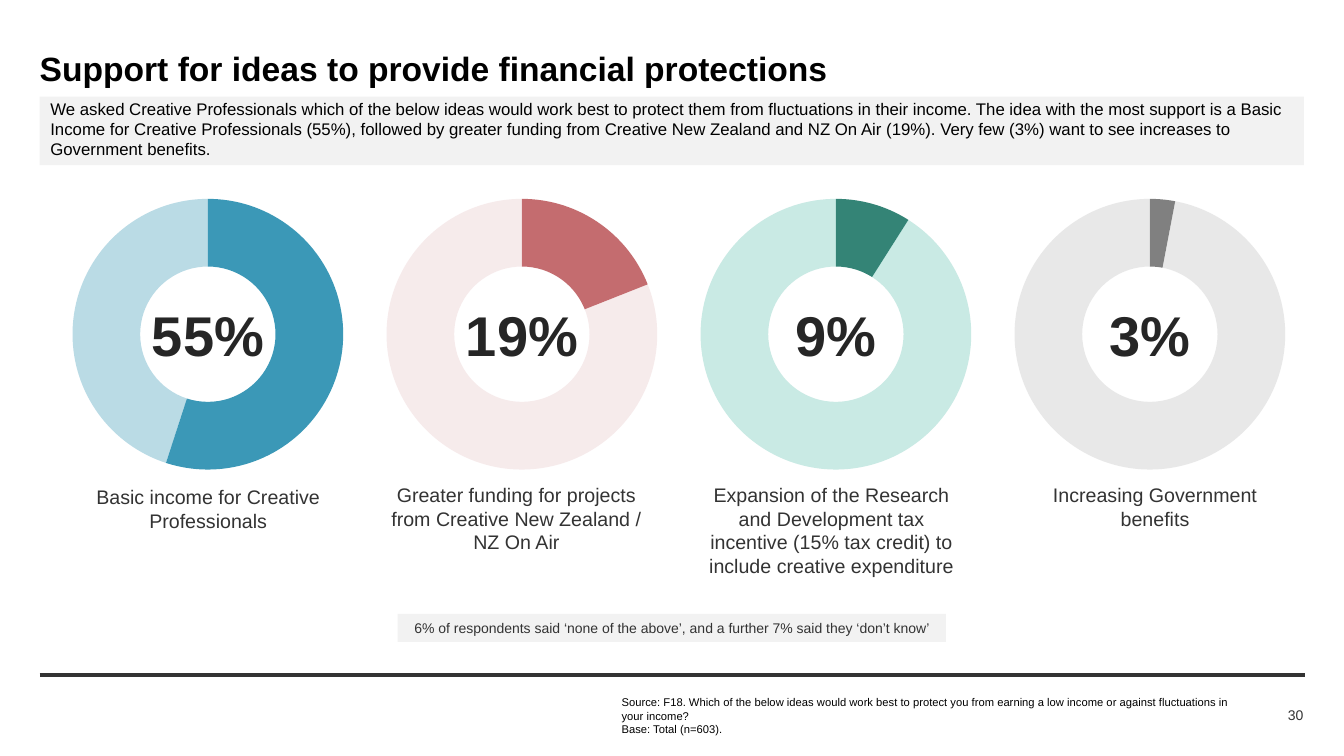
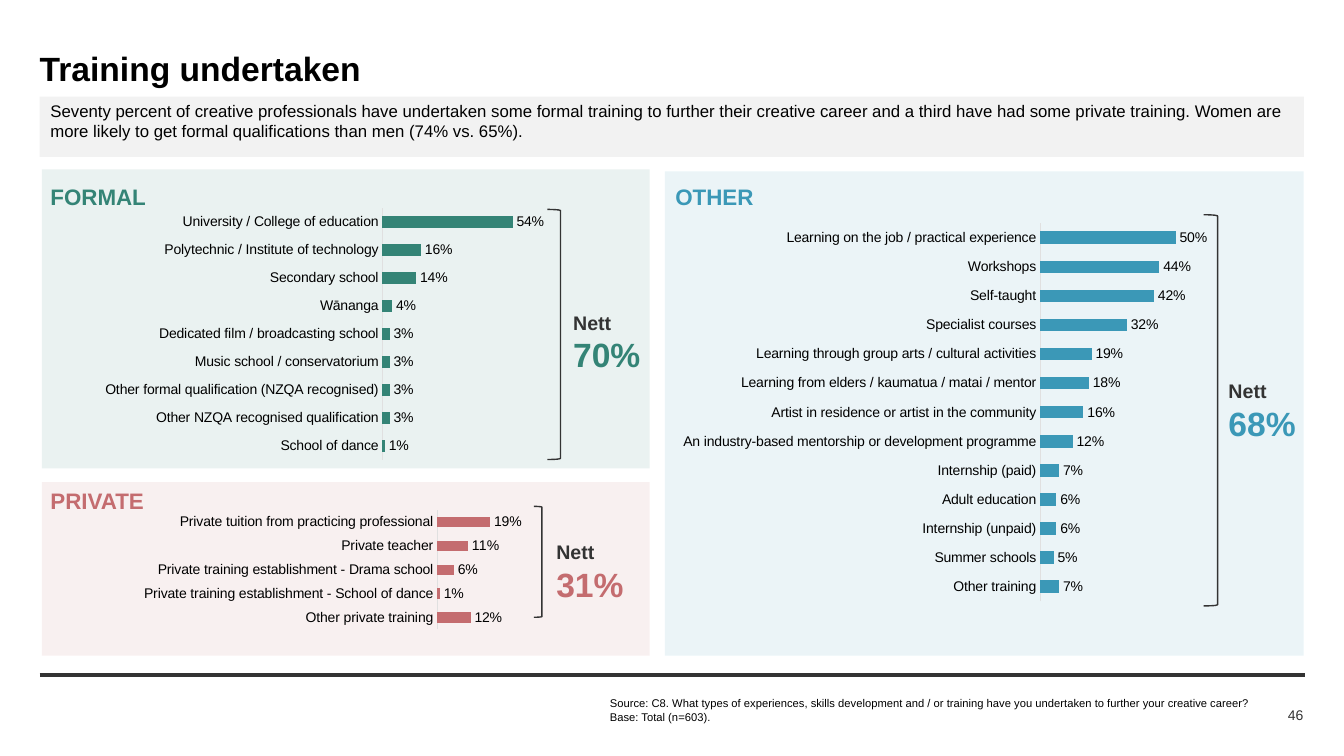
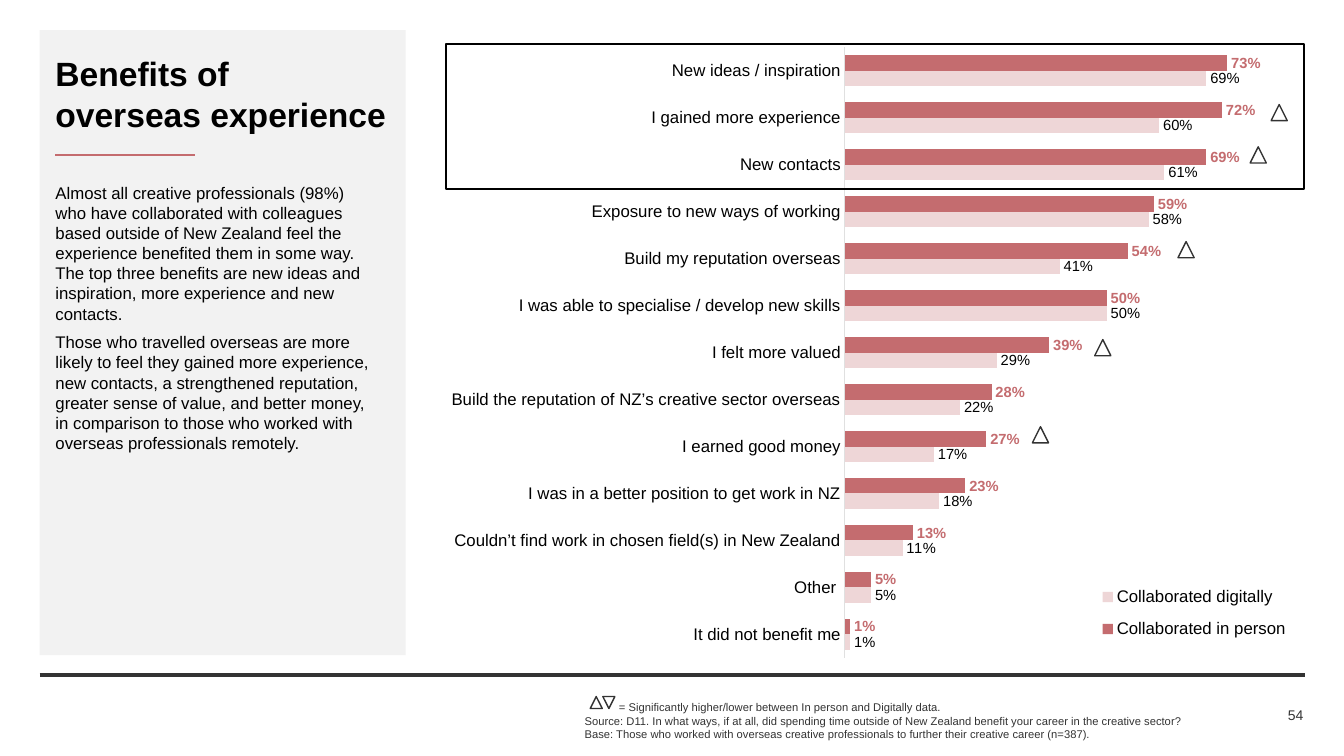
from dataclasses import dataclass

from lxml import etree
from pptx import Presentation
from pptx.chart.data import CategoryChartData
from pptx.dml.color import RGBColor
from pptx.enum.chart import XL_CHART_TYPE, XL_LABEL_POSITION, XL_LEGEND_POSITION, XL_TICK_MARK
from pptx.enum.shapes import MSO_CONNECTOR, MSO_SHAPE
from pptx.enum.text import MSO_ANCHOR, PP_ALIGN
from pptx.oxml.ns import qn
from pptx.util import Pt

LEFT, CENTER, RIGHT = PP_ALIGN.LEFT, PP_ALIGN.CENTER, PP_ALIGN.RIGHT
TOP, MIDDLE = MSO_ANCHOR.TOP, MSO_ANCHOR.MIDDLE
RECTANGLE, TRIANGLE = MSO_SHAPE.RECTANGLE, MSO_SHAPE.ISOSCELES_TRIANGLE
BRACKET = MSO_SHAPE.LEFT_BRACKET
BAR, DOUGHNUT = XL_CHART_TYPE.BAR_CLUSTERED, XL_CHART_TYPE.DOUGHNUT
OUTSIDE_END, LEGEND_RIGHT = XL_LABEL_POSITION.OUTSIDE_END, XL_LEGEND_POSITION.RIGHT
NO_TICK, STRAIGHT = XL_TICK_MARK.NONE, MSO_CONNECTOR.STRAIGHT


@dataclass(frozen=True)
class Theme:
    font: str = "Arial"
    black: str = "000000"
    dark: str = "333333"
    figure: str = "262626"
    white: str = "FFFFFF"
    band: str = "F2F2F2"
    axis: str = "E0E0E0"
    blue: str = "3B98B7"
    red: str = "C46C6F"
    pale_red: str = "E8C6C7"
    light_red: str = "EED6D7"
    green: str = "348476"
    mint: str = "65C3B3"
    gray: str = "808080"
    pale_gray: str = "BFBFBF"
    label_gray: str = "666666"
    title: float = 24
    heading: float = 16
    caption: float = 14
    body: float = 12
    label: float = 10
    pair_label: float = 10.5
    source: float = 8
    big: float = 40


THEME = Theme()

PROTECTIONS = {
    "title": "Support for ideas to provide financial protections",
    "summary": "We asked Creative Professionals which of the below ideas would work best to protect them from fluctuations in their income. The idea with the most support is a Basic Income for Creative Professionals (55%), followed by greater funding from Creative New Zealand and NZ On Air (19%). Very few (3%) want to see increases to Government benefits.",
    "source": [
        "Source: F18. Which of the below ideas would work best to protect you from earning a low income or against fluctuations in your income?",
        "Base: Total (n=603).",
    ],
    "note": "6% of respondents said ‘none of the above’, and a further 7% said they ‘don’t know’",
    "page": "30",
}
IDEAS = [
    (55, "Basic income for Creative Professionals", THEME.blue, THEME.blue, (55.5, 346.5)),
    (19, "Greater funding for projects from Creative New Zealand / NZ On Air",
     THEME.red, THEME.pale_red, (275.6, 345)),
    (9, "Expansion of the Research and Development tax incentive (15% tax credit) to include creative expenditure",
     THEME.green, THEME.mint, (500.7, 345)),
    (3, "Increasing Government benefits", THEME.gray, THEME.pale_gray, (731.8, 345)),
]

TRAINING = {
    "title": "Training undertaken",
    "summary": "Seventy percent of creative professionals have undertaken some formal training to further their creative career and a third have had some private training. Women are more likely to get formal qualifications than men (74% vs. 65%).",
    "source": [
        "Source: C8. What types of experiences, skills development and / or training have you undertaken to further your creative career?",
        "Base: Total (n=603).",
    ],
    "page": "46",
}
TRAINING_PANELS = [
    {
        "name": "FORMAL", "nett": "70%", "color": THEME.green,
        "panel": (30, 121, 434, 213.6), "heading": (36, 131), "chart": (-22, 144.7, 566.6, 191.5),
        "plot": (0.521, 0.021, 0.304, 0.938), "bracket": (391, 149.6, 9.4, 178.6), "total": (409.4, 221.8),
        "rows": [
            ("University / College of education", 54),
            ("Polytechnic / Institute of technology", 16),
            ("Secondary school", 14),
            ("Wānanga", 4),
            ("Dedicated film / broadcasting school", 3),
            ("Music school / conservatorium", 3),
            ("Other formal qualification (NZQA recognised)", 3),
            ("Other NZQA recognised qualification", 3),
            ("School of dance", 1),
        ],
    },
    {
        "name": "PRIVATE", "nett": "31%", "color": THEME.red,
        "panel": (30, 344.4, 434, 124), "heading": (36, 347.8), "chart": (6.9, 361.6, 566.6, 90.7),
        "plot": (0.539, 0.032, 0.352, 0.938), "bracket": (381.3, 361.7, 5.8, 79.2), "total": (397.4, 386),
        "rows": [
            ("Private tuition from practicing professional", 19),
            ("Private teacher", 11),
            ("Private training establishment - Drama school", 6),
            ("Private training establishment - School of dance", 1),
            ("Other private training", 12),
        ],
    },
    {
        "name": "OTHER", "nett": "68%", "color": THEME.blue,
        "panel": (475, 122.4, 456.2, 346), "heading": (482.4, 131), "chart": (460.5, 153.4, 561.6, 288),
        "plot": (0.503, 0.021, 0.345, 0.938), "bracket": (859.7, 153.4, 10, 279.4), "total": (877.5, 270.7),
        "rows": [
            ("Learning on the job / practical experience", 50),
            ("Workshops", 44),
            ("Self-taught", 42),
            ("Specialist courses", 32),
            ("Learning through group arts / cultural activities", 19),
            ("Learning from elders / kaumatua / matai / mentor", 18),
            ("Artist in residence or artist in the community", 16),
            ("An industry-based mentorship or development programme", 12),
            ("Internship (paid)", 7),
            ("Adult education", 6),
            ("Internship (unpaid)", 6),
            ("Summer schools", 5),
            ("Other training", 7),
        ],
    },
]

BENEFITS = {
    "title": "Benefits of\voverseas experience",
    "body": [
        "Almost all creative professionals (98%) who have collaborated with colleagues based outside of New Zealand feel the experience benefited them in some way. The top three benefits are new ideas and inspiration, more experience and new contacts.",
        "Those who travelled overseas are more likely to feel they gained more experience, new contacts, a strengthened reputation, greater sense of value, and better money, in comparison to those who worked with overseas professionals remotely.",
    ],
    "source": [
        "= Significantly higher/lower between In person and Digitally data.",
        "Source: D11. In what ways, if at all, did spending time outside of New Zealand benefit your career in the creative sector?",
        "Base: Those who worked with overseas creative professionals to further their creative career (n=387).",
    ],
    "page": "54",
}
BENEFIT_ROWS = [
    ("New ideas / inspiration", 73, 69),
    ("I gained more experience", 72, 60),
    ("New contacts", 69, 61),
    ("Exposure to new ways of working", 59, 58),
    ("Build my reputation overseas", 54, 41),
    ("I was able to specialise / develop new skills", 50, 50),
    ("I felt more valued", 39, 29),
    ("Build the reputation of NZ’s creative sector overseas", 28, 22),
    ("I earned good money", 27, 17),
    ("I was in a better position to get work in NZ", 23, 18),
    ("Couldn’t find work in chosen field(s) in New Zealand", 13, 11),
    ("Other ", 5, 5),
    ("It did not benefit me", 1, 1),
]
HIGHER_MARKS = [(908, 74.7), (893, 104.9), (841.5, 172.6), (782, 242.6), (737.5, 304.8)]


def rgb(color):
    return RGBColor.from_string(color)


def points(box):
    return [Pt(value) for value in box]


def style_font(font, size, color, bold=False):
    font.name = THEME.font
    font.size = Pt(size)
    font.bold = bold
    font.color.rgb = rgb(color)


def fill_solid(fill, color, opacity=100):
    fill.solid()
    fill.fore_color.rgb = rgb(color)
    if opacity < 100:
        for node in fill._xPr.iter(qn("a:srgbClr")):
            etree.SubElement(node, qn("a:alpha"), val=str(opacity * 1000))


def write(frame, lines, align=LEFT, anchor=TOP, space=0):
    frame.word_wrap = True
    frame.vertical_anchor = anchor
    for index, (text, size, color, bold) in enumerate(lines):
        paragraph = frame.paragraphs[0] if index == 0 else frame.add_paragraph()
        paragraph.alignment = align
        paragraph.space_before = Pt(space if index else 0)
        for position, part in enumerate(text.split("\v")):
            if position:
                paragraph.add_line_break()
            run = paragraph.add_run()
            run.text = part
            style_font(run.font, size, color, bold)


def add_text(slide, box, lines, **options):
    frame = slide.shapes.add_textbox(*points(box)).text_frame
    frame.margin_left = frame.margin_right = frame.margin_top = frame.margin_bottom = 0
    write(frame, lines, **options)
    return frame


def add_shape(slide, kind, box, fill=None, opacity=100, line=None, width=1, rotation=0):
    shape = slide.shapes.add_shape(kind, *points(box))
    shape.shadow.inherit = False
    shape.rotation = rotation
    if fill:
        fill_solid(shape.fill, fill, opacity)
    else:
        shape.fill.background()
    if line:
        shape.line.color.rgb = rgb(line)
        shape.line.width = Pt(width)
    else:
        shape.line.fill.background()
    return shape


def add_rule(slide, left, right, y, color, width):
    rule = slide.shapes.add_connector(STRAIGHT, *points((left, y, right, y)))
    rule.line.color.rgb = rgb(color)
    rule.line.width = Pt(width)
    etree.SubElement(rule._element.spPr, qn("a:effectLst"))


def add_layout(parent, index, box):
    for node in parent.findall(qn("c:layout")):
        parent.remove(node)
    layout = etree.Element(qn("c:layout"))
    manual = etree.SubElement(layout, qn("c:manualLayout"))
    if parent.tag == qn("c:plotArea"):
        etree.SubElement(manual, qn("c:layoutTarget"), val="inner")
    for name in ("xMode", "yMode"):
        etree.SubElement(manual, qn("c:" + name), val="edge")
    for name, value in zip("xywh", box):
        etree.SubElement(manual, qn("c:" + name), val=str(value))
    parent.insert(index, layout)


def add_chart(slide, kind, box, plot_box, categories, series):
    data = CategoryChartData(number_format="0%")
    data.categories = categories
    for name, values in series:
        data.add_series(name, [value / 100 for value in values])
    chart = slide.shapes.add_chart(kind, *points(box), data).chart
    chart.has_title = False
    chart.has_legend = False
    style_font(chart.font, THEME.label, THEME.dark)
    properties = etree.Element(qn("c:spPr"))
    etree.SubElement(properties, qn("a:noFill"))
    etree.SubElement(etree.SubElement(properties, qn("a:ln")), qn("a:noFill"))
    chart.element.find(qn("c:chart")).addnext(properties)
    add_layout(next(chart.element.iter(qn("c:plotArea"))), 0, plot_box)
    chart.plots[0].vary_by_categories = kind == DOUGHNUT
    return chart


def add_doughnut(slide, box, value, color, rest_color):
    chart = add_chart(slide, DOUGHNUT, box, (0.2, 0.045, 0.6, 0.908), ["1", "2"],
                      [("Series 1", (value, 100 - value))])
    next(chart.element.iter(qn("c:holeSize"))).set("val", "66")
    ring = chart.plots[0].series[0]
    labels = ring.data_labels
    labels.show_value = True
    style_font(labels.font, THEME.caption, THEME.label_gray)
    label_list = ring._element.find(qn("c:dLbls"))
    for index, (part_color, opacity) in enumerate([(color, 100), (rest_color, 35)]):
        part = ring.points[index].format
        fill_solid(part.fill, part_color, opacity)
        part.line.fill.background()
        hidden = etree.Element(qn("c:dLbl"))
        etree.SubElement(hidden, qn("c:idx"), val=str(index))
        etree.SubElement(hidden, qn("c:delete"), val="1")
        label_list.insert(index, hidden)


def add_bars(slide, box, plot_box, categories, series, styles, gap, maximum, category_size):
    chart = add_chart(slide, BAR, box, plot_box, categories, series)
    plot = chart.plots[0]
    plot.gap_width = gap
    plot.overlap = 0
    axis = chart.category_axis
    axis.reverse_order = True
    axis.major_tick_mark = axis.minor_tick_mark = NO_TICK
    axis.has_major_gridlines = False
    axis.format.line.color.rgb = rgb(THEME.axis)
    axis.format.line.width = Pt(0.75)
    style_font(axis.tick_labels.font, category_size, THEME.black)
    values = chart.value_axis
    values.minimum_scale, values.maximum_scale = 0, maximum
    values.has_major_gridlines = False
    values.visible = False
    for bars, (color, size, label_color, bold) in zip(plot.series, styles):
        fill_solid(bars.format.fill, color)
        bars.invert_if_negative = False
        labels = bars.data_labels
        labels.show_value = True
        labels.number_format = "0%"
        labels.number_format_is_linked = False
        labels.position = OUTSIDE_END
        style_font(labels.font, size, label_color, bold)
    return chart


def start_slide(presentation, content, title_box, source_box, source_color=THEME.black, source_anchor=TOP):
    slide = presentation.slides.add_slide(presentation.slide_layouts[6])
    add_rule(slide, 28.4, 932, 482, THEME.dark, 3)
    add_text(slide, (855, 503, 76, 16), [(content["page"], THEME.label, THEME.dark, False)],
             align=RIGHT, anchor=MIDDLE)
    source = add_text(slide, source_box, [(line, THEME.source, source_color, False) for line in content["source"]],
                      anchor=source_anchor)
    return slide, source, (title_box, [(content["title"], THEME.title, THEME.black, True)])


def start_summary_slide(presentation, content, band_height, summary_box, source_box):
    slide, _, title = start_slide(presentation, content, (28.4, 34, 903, 32), source_box)
    add_shape(slide, RECTANGLE, (28.4, 69, 903, band_height), THEME.band)
    add_text(slide, *title)
    add_text(slide, summary_box, [(content["summary"], THEME.body, THEME.black, False)])
    return slide


def build_protections(presentation):
    slide = start_summary_slide(presentation, PROTECTIONS, 49, (36, 70.5, 883, 31), (444, 497, 438.5, 20))
    chart_left, pitch, width = -14.2, 224.3, 325.4
    for index, (value, caption, color, rest_color, (x, y)) in enumerate(IDEAS):
        left = chart_left + index * pitch
        add_doughnut(slide, (left, 132.5, width, 213), value, color, rest_color)
        add_text(slide, (left + (width - 123) / 2, 214.5, 123, 48),
                 [(f"{value}%", THEME.big, THEME.figure, True)], align=CENTER)
        add_text(slide, (x, y, 186.5, 34), [(caption, THEME.caption, THEME.dark, False)], align=CENTER)
    note = add_shape(slide, RECTANGLE, (284, 438.5, 391.7, 20), THEME.band)
    write(note.text_frame, [(PROTECTIONS["note"], THEME.label, THEME.dark, False)], align=CENTER, anchor=MIDDLE)


def build_training(presentation):
    slide = start_summary_slide(presentation, TRAINING, 43, (36, 72, 895, 31), (435.6, 497.5, 468, 10))
    for group in TRAINING_PANELS:
        color = group["color"]
        add_shape(slide, RECTANGLE, group["panel"], color, opacity=10)
        categories, values = zip(*group["rows"])
        add_bars(slide, group["chart"], group["plot"], categories, [("Series 1", values)],
                 [(color, THEME.label, THEME.black, False)], 132, 1, THEME.label)
        add_text(slide, (*group["heading"], 135, 19), [(group["name"], THEME.heading, color, True)])
        add_shape(slide, BRACKET, group["bracket"], line=THEME.dark, rotation=180)
        add_text(slide, (*group["total"], 55, 46),
                 [("Nett", THEME.caption, THEME.dark, True), (group["nett"], THEME.title, color, True)])


def build_benefits(presentation):
    slide, source, title = start_slide(presentation, BENEFITS, (39.6, 38, 261, 32), (417.6, 504.7, 531, 20),
                                       THEME.dark, MIDDLE)
    source.paragraphs[0]._p.get_or_add_pPr().set("indent", str(Pt(24.5)))
    add_shape(slide, RECTANGLE, (28.4, 21.6, 261.4, 446.4), THEME.band)
    categories, in_person, digital = zip(*BENEFIT_ROWS)
    chart = add_bars(slide, (289, 21.3, 721.4, 465), (0.436, 0.027, 0.415, 0.938), categories,
                     [("Collaborated in person", in_person), ("Collaborated digitally", digital)],
                     [(THEME.red, THEME.pair_label, THEME.red, True),
                      (THEME.light_red, THEME.pair_label, THEME.black, False)], 102, 0.8, THEME.body)
    chart.has_legend = True
    legend = chart.legend
    legend.position = LEGEND_RIGHT
    legend.include_in_layout = False
    style_font(legend.font, THEME.body, THEME.black)
    add_layout(next(chart.element.iter(qn("c:legend"))), 1, (0.68, 0.836, 0.204, 0.12))
    add_text(slide, *title)
    add_rule(slide, 39.6, 139, 110.6, THEME.red, 1.5)
    add_text(slide, (39.6, 130.3, 231, 153), [(text, THEME.body, THEME.black, False) for text in BENEFITS["body"]],
             space=6)
    add_shape(slide, RECTANGLE, (318.6, 31.5, 612.8, 103.6), line=THEME.black, width=1.5)
    for x, y in HIGHER_MARKS:
        add_shape(slide, TRIANGLE, (x, y, 11.5, 11.5), THEME.white, line=THEME.dark)
    for index in range(2):
        add_shape(slide, TRIANGLE, (421.6 + index * 9, 497.5, 8.6, 8.6), THEME.white, line=THEME.dark,
                  rotation=index * 180)


def main():
    presentation = Presentation()
    presentation.slide_width, presentation.slide_height = Pt(960), Pt(540)
    build_protections(presentation)
    build_training(presentation)
    build_benefits(presentation)
    presentation.save("out.pptx")


if __name__ == "__main__":
    main()
